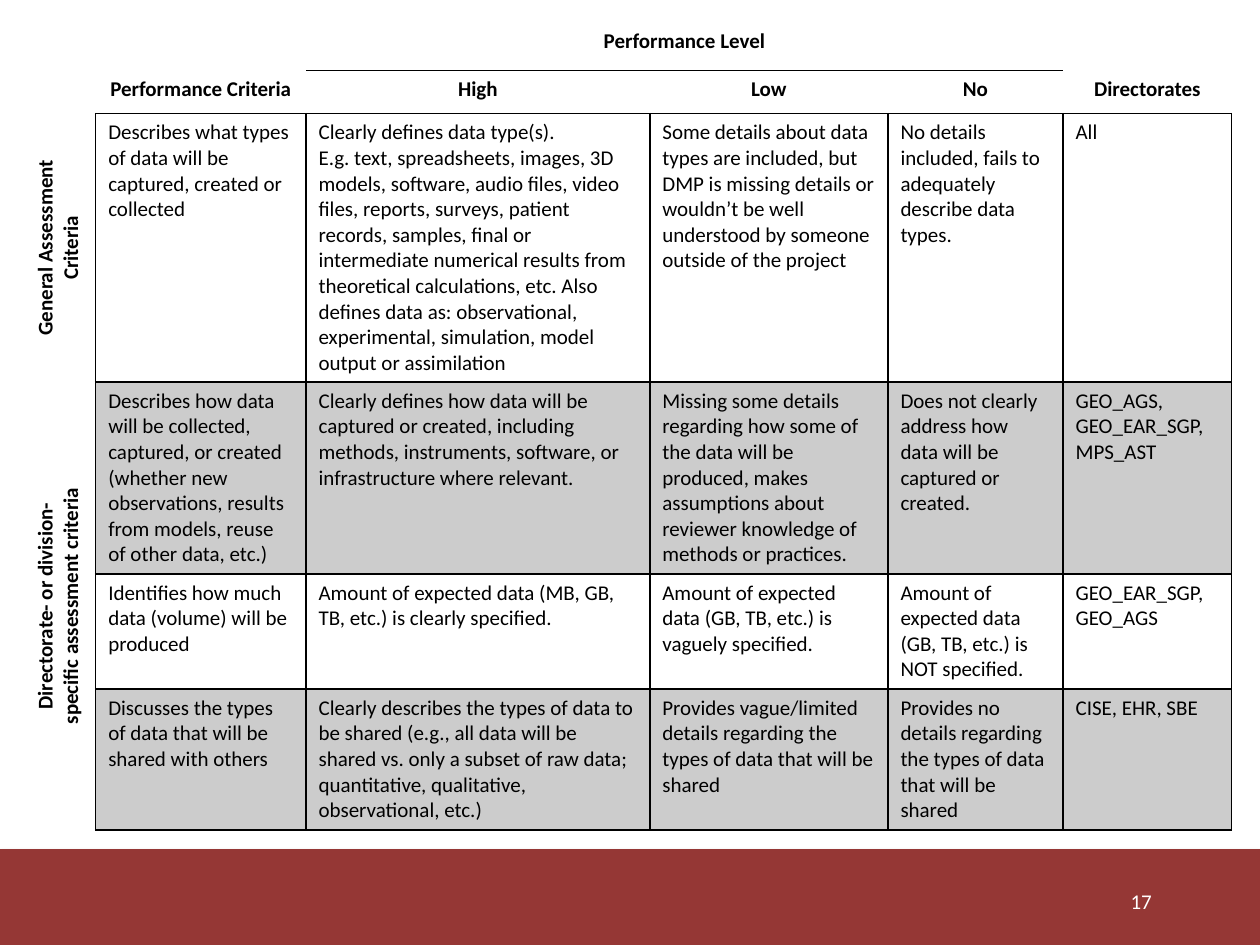
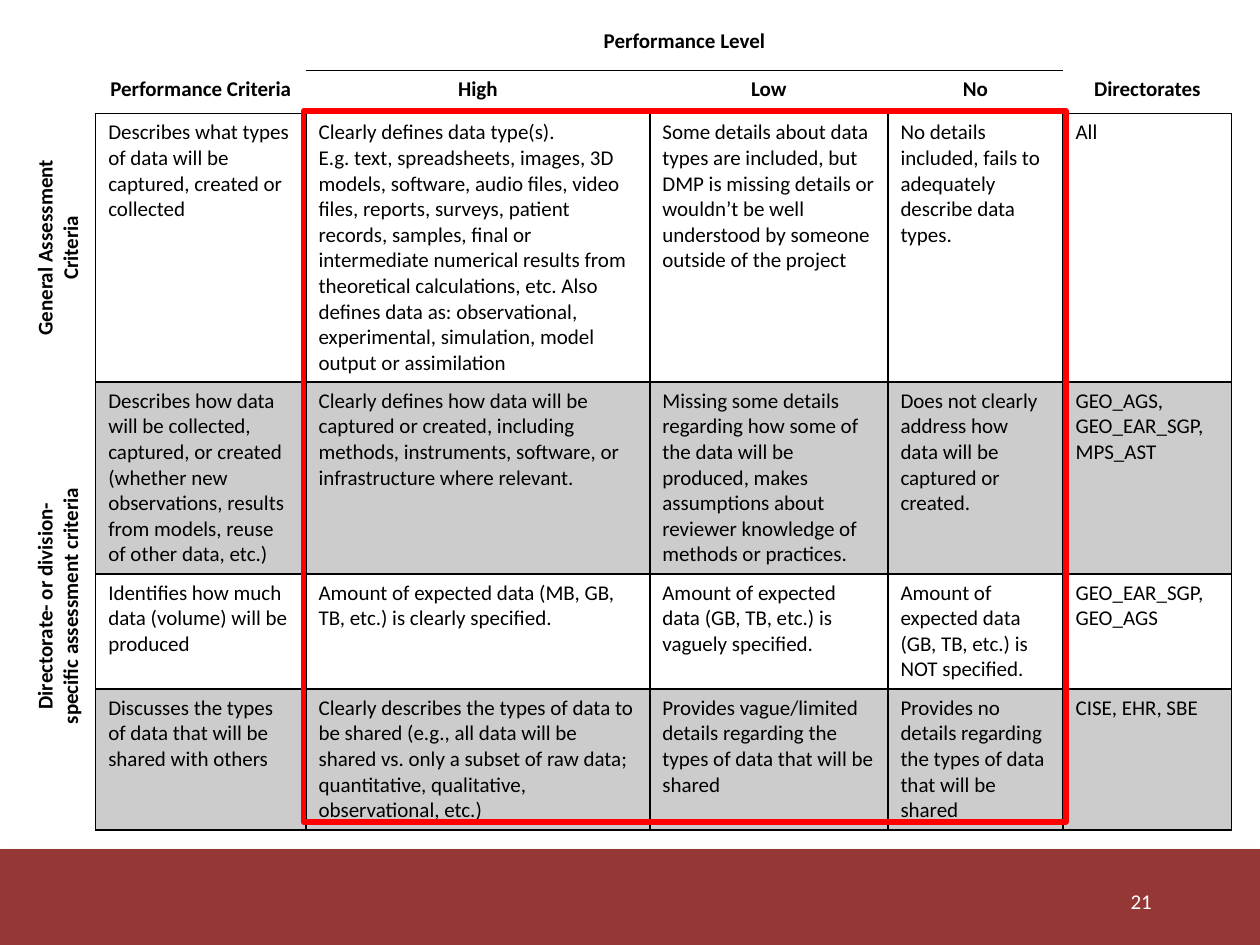
"""Builds two slides showing a rubric for data management plans."""
import copy

import pptx
import pptx.dml.color
import pptx.enum.shapes
import pptx.enum.text
import pptx.oxml.ns
import pptx.util
from lxml import etree

Cm = pptx.util.Cm
Pt = pptx.util.Pt
qn = pptx.oxml.ns.qn
ALIGN = pptx.enum.text.PP_ALIGN
MIDDLE = pptx.enum.text.MSO_ANCHOR.MIDDLE
RECTANGLE = pptx.enum.shapes.MSO_SHAPE.RECTANGLE

COLORS = {"text": "000000", "white": "FFFFFF", "band": "953735", "frame": "FF0000"}
FONT = "Calibri"
SIZE = 12
SHADE_ALPHA = 20

COLUMN_WIDTHS = [1.4, 4.24, 6.93, 4.8, 3.53, 3.4]
ROW_HEIGHTS = [1.17, 0.87, 5.41, 3.87, 2.32, 2.84]
HEADINGS = ["Performance Criteria", "High", "Low", "No", "Directorates"]
LEVEL_COLUMNS = range(2, 5)
FIRST_BODY_ROW = 2
SIDE_LABELS = {
    2: "General Assessment\nCriteria",
    3: "Directorate- or division-\nspecific assessment criteria",
}
CRITERIA = [
    [
        "Describes what types of data will be captured, created or collected",
        "Clearly defines data type(s).\nE.g. text, spreadsheets, images, 3D models, "
        "software, audio files, video files, reports, surveys, patient records, "
        "samples, final or intermediate numerical results from theoretical "
        "calculations, etc. Also defines data as: observational, experimental, "
        "simulation, model output or assimilation",
        "Some details about data types are included, but DMP is missing details or "
        "wouldn’t be well understood by someone outside of the project",
        "No details included, fails to adequately describe data types.",
        "All",
    ],
    [
        "Describes how data will be collected, captured, or created (whether new "
        "observations, results from models, reuse of other data, etc.)",
        "Clearly defines how data will be captured or created, including methods, "
        "instruments, software, or infrastructure where relevant.",
        "Missing some details regarding how some of the data will be produced, makes "
        "assumptions about reviewer knowledge of methods or practices.",
        "Does not clearly address how data will be captured or created.",
        "GEO_AGS, GEO_EAR_SGP, MPS_AST",
    ],
    [
        "Identifies how much data (volume) will be produced",
        "Amount of expected data (MB, GB, TB, etc.) is clearly specified.",
        "Amount of expected data (GB, TB, etc.) is vaguely specified.",
        "Amount of expected data (GB, TB, etc.) is NOT specified.",
        "GEO_EAR_SGP, GEO_AGS",
    ],
    [
        "Discusses the types of data that will be shared with others",
        "Clearly describes the types of data to be shared (e.g., all data will be "
        "shared vs. only a subset of raw data; quantitative, qualitative, "
        "observational, etc.)",
        "Provides vague/limited details regarding the types of data that will be shared",
        "Provides no details regarding the types of data that will be shared",
        "CISE, EHR, SBE",
    ],
]


def rgb(name):
    """Return the named colour."""
    return pptx.dml.color.RGBColor.from_string(COLORS[name])


def write(tf, text, color="text", bold=False, align=ALIGN.LEFT):
    """Write text into the first paragraph, with a line break at each newline."""
    p = tf.paragraphs[0]
    p.alignment = align
    for i, line in enumerate(text.split("\n") if text else []):
        if i:
            p.add_line_break()
            p._p[-1].append(copy.deepcopy(r._r.rPr))
        r = p.add_run()
        r.text = line
        r.font.name = FONT
        r.font.size = Pt(SIZE)
        r.font.bold = bold
        r.font.color.rgb = rgb(color)
    etree.SubElement(p._p, qn("a:endParaRPr"), sz=str(SIZE * 100))


def add_box(s, left, top, width, height, fill=None, line=None, weight=3):
    """Add a rectangle with an optional fill and outline."""
    sp = s.shapes.add_shape(RECTANGLE, Cm(left), Cm(top), Cm(width), Cm(height))
    sp.shadow.inherit = False
    if fill:
        sp.fill.solid()
        sp.fill.fore_color.rgb = rgb(fill)
    else:
        sp.fill.background()
    if line:
        sp.line.color.rgb = rgb(line)
        sp.line.width = Pt(weight)
    else:
        sp.line.fill.background()
    return sp


def add_shadow(sp):
    """Give a shape a soft shadow below it."""
    effects = sp._element.spPr.find(qn("a:effectLst"))
    shadow = etree.SubElement(
        effects, qn("a:outerShdw"), blurRad=str(Pt(3.1)), dist=str(Pt(1.8)),
        dir="5400000", rotWithShape="0")
    color = etree.SubElement(shadow, qn("a:srgbClr"), val=COLORS["text"])
    etree.SubElement(color, qn("a:alpha"), val="35000")


def add_footer(s, number):
    """Add the bottom band and the slide number."""
    add_shadow(add_box(s, 0, 17.12, 25.4, 1.93, fill="band"))
    tf = s.shapes.add_textbox(Cm(17.55), Cm(17.65), Cm(5.92), Cm(1.02)).text_frame
    tf.word_wrap = True
    tf.vertical_anchor = MIDDLE
    write(tf, str(number), color="white", align=ALIGN.RIGHT)


def cell_edges(row, col):
    """Return the sides of a cell that carry a line."""
    if row >= FIRST_BODY_ROW:
        return "LRTB" if col else "R"
    if row == 0:
        return "B" if col in LEVEL_COLUMNS else ""
    if col in LEVEL_COLUMNS:
        return "TB"
    return "B" if col else ""


def set_borders(cell, edges):
    """Draw the given sides of a cell and clear the others."""
    tc_pr = cell._tc.get_or_add_tcPr()
    for side in "LRTB":
        ln = etree.SubElement(tc_pr, qn(f"a:ln{side}"), w=str(Pt(1)))
        if side in edges:
            fill = etree.SubElement(ln, qn("a:solidFill"))
            etree.SubElement(fill, qn("a:srgbClr"), val=COLORS["text"])
        else:
            etree.SubElement(ln, qn("a:noFill"))


def shade(cell):
    """Fill a cell with translucent black."""
    cell.fill.solid()
    cell.fill.fore_color.rgb = rgb("text")
    color = cell._tc.tcPr.find(f"{qn('a:solidFill')}/{qn('a:srgbClr')}")
    etree.SubElement(color, qn("a:alpha"), val=str(SHADE_ALPHA * 1000))


def fill_cell(cell, row, col):
    """Write and format one cell according to its place in the rubric."""
    set_borders(cell, cell_edges(row, col))
    if col and row > FIRST_BODY_ROW and row % 2:
        shade(cell)
    else:
        cell.fill.background()
    if col == 0 and row in SIDE_LABELS:
        cell._tc.tcPr.set("vert", "vert270")
        cell.vertical_anchor = MIDDLE
        write(cell.text_frame, SIDE_LABELS[row], bold=True, align=ALIGN.CENTER)
    elif (row, col) == (0, LEVEL_COLUMNS[0]):
        cell.vertical_anchor = MIDDLE
        write(cell.text_frame, "Performance Level", bold=True, align=ALIGN.CENTER)
    elif row == 1 and col:
        write(cell.text_frame, HEADINGS[col - 1], bold=True, align=ALIGN.CENTER)
    elif row >= FIRST_BODY_ROW and col:
        write(cell.text_frame, CRITERIA[row - FIRST_BODY_ROW][col - 1])
    else:
        write(cell.text_frame, "")


def add_rubric(s):
    """Add the rubric table."""
    n_rows, n_cols = len(ROW_HEIGHTS), len(COLUMN_WIDTHS)
    table = s.shapes.add_table(
        n_rows, n_cols, Cm(0.53), Cm(0.25),
        Cm(sum(COLUMN_WIDTHS)), Cm(sum(ROW_HEIGHTS))).table
    table.first_row = table.horz_banding = False
    for column, width in zip(table.columns, COLUMN_WIDTHS):
        column.width = Cm(width)
    for row, height in zip(table.rows, ROW_HEIGHTS):
        row.height = Cm(height)
    table.cell(0, LEVEL_COLUMNS[0]).merge(table.cell(0, LEVEL_COLUMNS[-1]))
    table.cell(3, 0).merge(table.cell(n_rows - 1, 0))
    for row in range(n_rows):
        for col in range(n_cols):
            fill_cell(table.cell(row, col), row, col)


def add_rubric_slide(prs, number):
    """Add a slide with the footer and the rubric."""
    s = prs.slides.add_slide(prs.slide_layouts[6])
    add_footer(s, number)
    add_rubric(s)
    return s


def main():
    """Build and save the presentation."""
    prs = pptx.Presentation()
    prs.slide_width, prs.slide_height = Cm(25.4), Cm(19.05)
    add_rubric_slide(prs, 17)
    s = add_rubric_slide(prs, 21)
    add_box(s, 6.12, 2.24, 15.37, 14.33, line="frame")
    prs.save("out.pptx")


if __name__ == "__main__":
    main()
